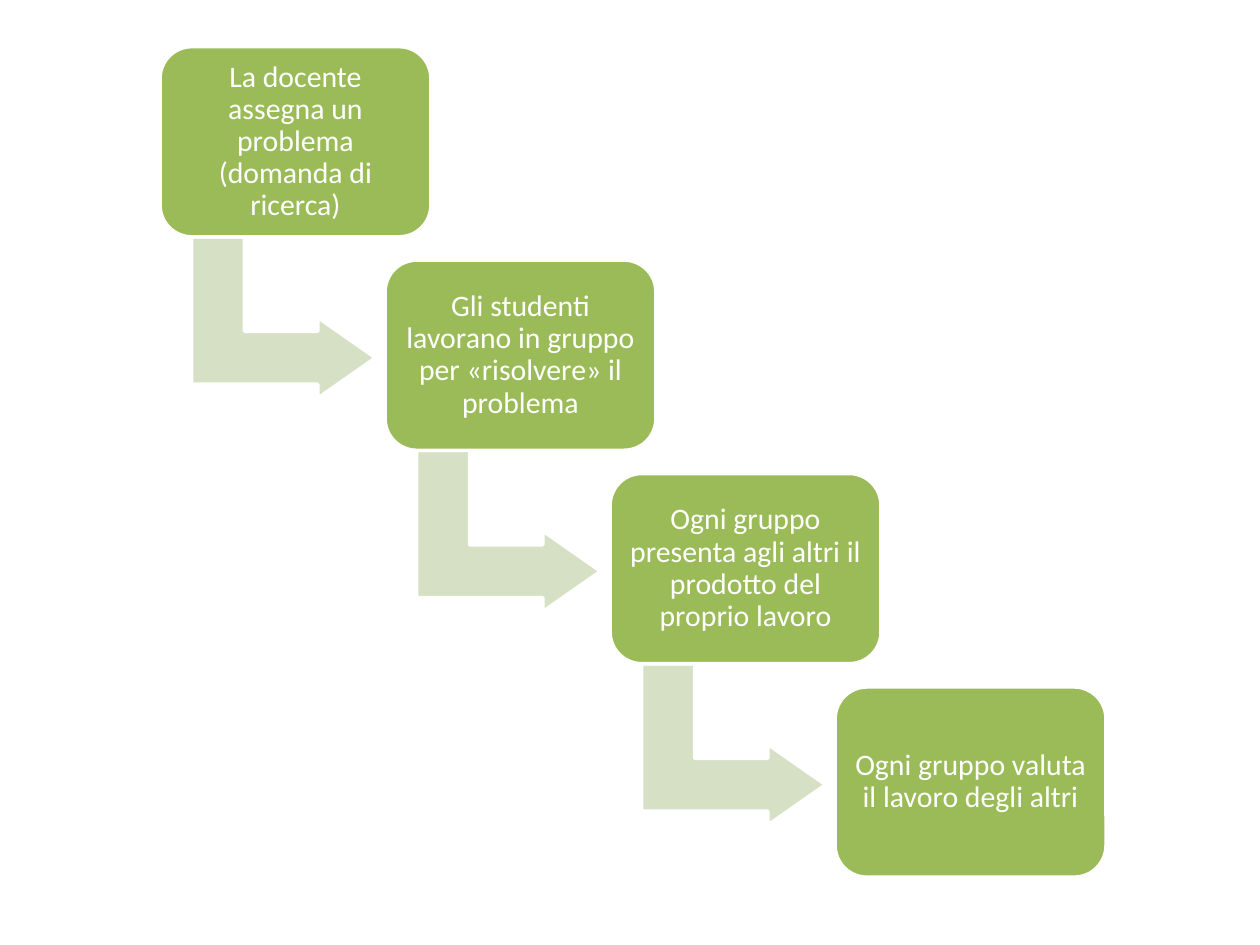
from dataclasses import dataclass

from pptx import Presentation
from pptx.dml.color import RGBColor
from pptx.enum.shapes import MSO_SHAPE as Preset
from pptx.enum.text import MSO_ANCHOR as Anchor, PP_ALIGN as Align
from pptx.shapes.autoshape import Shape
from pptx.slide import Slide
from pptx.util import Inches, Pt


@dataclass(frozen=True)
class Theme:
    step_fill: RGBColor = RGBColor.from_string("9BBB59")
    arrow_fill: RGBColor = RGBColor.from_string("D5E0C4")
    white: RGBColor = RGBColor.from_string("FFFFFF")
    font: str = "Calibri"
    text_size: int = 17
    outline: int = 2


@dataclass(frozen=True)
class Frame:
    left: float
    top: float
    width: float
    height: float

    def moved(self, right: float, down: float) -> "Frame":
        return Frame(self.left + right, self.top + down, self.width, self.height)


THEME = Theme()
FIRST_STEP = Frame(1.27, 0.37, 2.15, 1.51)
FIRST_ARROW = Frame(1.61, 1.79, 1.28, 1.46)
SHIFT_RIGHT = 1.786
SHIFT_DOWN = 1.694
TEXT_INSET = 0.07
STEPS = (
    "La docente assegna un problema (domanda di ricerca)",
    "Gli studenti lavorano in gruppo per «risolvere» il problema",
    "Ogni gruppo presenta agli altri il prodotto del proprio lavoro",
    "Ogni gruppo valuta il lavoro degli altri",
)


def add_outlined(
    page: Slide, preset: Preset, frame: Frame, fill: RGBColor, adjustments: tuple[float, ...]
) -> Shape:
    shape = page.shapes.add_shape(
        preset, Inches(frame.left), Inches(frame.top), Inches(frame.width), Inches(frame.height)
    )
    shape.shadow.inherit = False
    shape.fill.solid()
    shape.fill.fore_color.rgb = fill
    shape.line.color.rgb = THEME.white
    shape.line.width = Pt(THEME.outline)
    for index, value in enumerate(adjustments):
        shape.adjustments[index] = value
    return shape


def add_arrow(page: Slide, frame: Frame) -> None:
    arrow = add_outlined(page, Preset.BENT_UP_ARROW, frame, THEME.arrow_fill, (0.328, 0.25, 0.358))
    arrow.rotation = 90


def add_step(page: Slide, frame: Frame, text: str) -> None:
    box = add_outlined(page, Preset.ROUNDED_RECTANGLE, frame, THEME.step_fill, (0.167,))
    body = box.text_frame
    body.word_wrap = True
    body.vertical_anchor = Anchor.MIDDLE
    body.margin_left = body.margin_right = Inches(TEXT_INSET)
    body.margin_top = body.margin_bottom = Inches(TEXT_INSET)
    para = body.paragraphs[0]
    para.alignment = Align.CENTER
    para.line_spacing = 0.9
    para.space_after = Pt(6)
    span = para.add_run()
    span.text = text
    span.font.name = THEME.font
    span.font.size = Pt(THEME.text_size)
    span.font.color.rgb = THEME.white


def main() -> None:
    deck = Presentation()
    deck.slide_width = Inches(10)
    deck.slide_height = Inches(7.5)
    page = deck.slides.add_slide(deck.slide_layouts[6])
    for index, text in enumerate(STEPS):
        shift = (index * SHIFT_RIGHT, index * SHIFT_DOWN)
        if index < len(STEPS) - 1:
            add_arrow(page, FIRST_ARROW.moved(*shift))
        add_step(page, FIRST_STEP.moved(*shift), text)
    deck.save("out.pptx")


if __name__ == "__main__":
    main()
